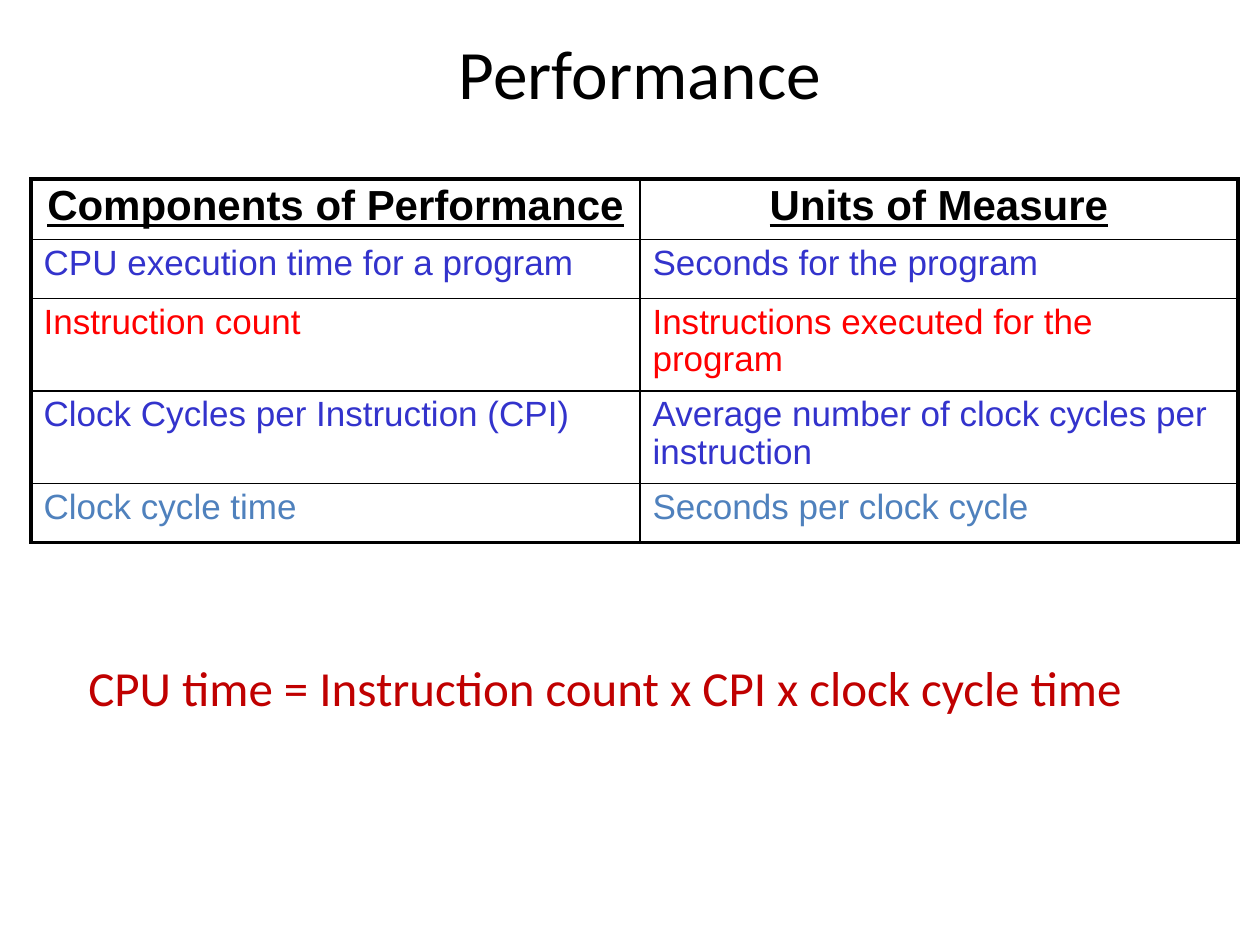
from lxml.etree import SubElement
from pptx import Presentation
from pptx.dml.color import RGBColor
from pptx.enum.text import MSO_ANCHOR as Anchor, PP_ALIGN as Align
from pptx.oxml.ns import qn
from pptx.util import Emu, Pt

SCALE = 914400 / 126
BLACK = RGBColor(0x00, 0x00, 0x00)
BLUE = RGBColor(0x33, 0x33, 0xCC)
RED = RGBColor(0xFF, 0x00, 0x00)
STEEL = RGBColor(0x4F, 0x81, 0xBD)
CRIMSON = RGBColor(0xC0, 0x00, 0x00)

HEADER = {"name": "Arial", "size": Pt(24), "bold": True, "underline": True}
BODY = {"name": "Arial", "size": Pt(20), "bold": False}
ROWS = [
    ("Components of Performance", "Units of Measure", BLACK, 59),
    ("CPU execution time for a program", "Seconds for the program", BLUE, 59),
    ("Instruction count", "Instructions executed for the program", RED, 87),
    ("Clock Cycles per Instruction (CPI)", "Average number of clock cycles per instruction", BLUE, 87),
    ("Clock cycle time", "Seconds per clock cycle", STEEL, 59),
]
COLUMNS = (609, 598)


def px(length):
    return Emu(round(length * SCALE))


class SlideBuilder:
    """Holds the text style and current slide and adds its elements."""

    def __init__(self, slide, outer=2.25, inner=1):
        self.slide = slide
        self.outer = outer
        self.inner = inner

    def fill_text(self, frame, text, color, font, align=Align.LEFT, spacing=1.0):
        paragraph = frame.paragraphs[0]
        paragraph.alignment = align
        paragraph.line_spacing = spacing
        run = paragraph.add_run()
        run.text = text
        for name, value in font.items():
            setattr(run.font, name, value)
        run.font.color.rgb = color

    def text(self, box, text, color, font, anchor=Anchor.TOP, **layout):
        frame = self.slide.shapes.add_textbox(*map(px, box)).text_frame
        frame.word_wrap = True
        frame.vertical_anchor = anchor
        self.fill_text(frame, text, color, font, **layout)

    def border(self, cell, edges):
        properties = cell._tc.get_or_add_tcPr()
        for side, is_outer in edges.items():
            width = Pt(self.outer if is_outer else self.inner)
            line = SubElement(properties, qn(f"a:ln{side}"), w=str(width))
            fill = SubElement(line, qn("a:solidFill"))
            SubElement(fill, qn("a:srgbClr"), val=str(BLACK))

    def table(self, left, top, columns, rows):
        height = sum(row[-1] for row in rows)
        box = map(px, (left, top, sum(columns), height))
        table = self.slide.shapes.add_table(len(rows), len(columns), *box).table
        table.first_row = table.horz_banding = False
        for column, width in zip(table.columns, columns):
            column.width = px(width)
        last_row, last_column = len(rows) - 1, len(columns) - 1
        for r, (*texts, color, row_height) in enumerate(rows):
            table.rows[r].height = px(row_height)
            font, align = (BODY, Align.LEFT) if r else (HEADER, Align.CENTER)
            for c, text in enumerate(texts):
                cell = table.cell(r, c)
                self.fill_text(cell.text_frame, text, color, font, align, 0.95)
                self.border(cell, {"L": c == 0, "R": c == last_column,
                                   "T": r == 0, "B": r == last_row})
                cell.fill.background()


def main():
    presentation = Presentation()
    presentation.slide_width, presentation.slide_height = px(1260), px(945)
    builder = SlideBuilder(presentation.slides.add_slide(presentation.slide_layouts[6]))
    builder.text((94, 39, 1092, 66), "Performance", BLACK,
                 {"name": "Calibri", "size": Pt(39.6)}, Anchor.MIDDLE, align=Align.CENTER)
    builder.table(31, 179, COLUMNS, ROWS)
    builder.text((76, 640, 1155, 79), "CPU time = Instruction count x CPI x clock cycle time",
                 CRIMSON, {"name": "Calibri", "size": Pt(28)}, spacing=1.2)
    presentation.save("out.pptx")


if __name__ == "__main__":
    main()
